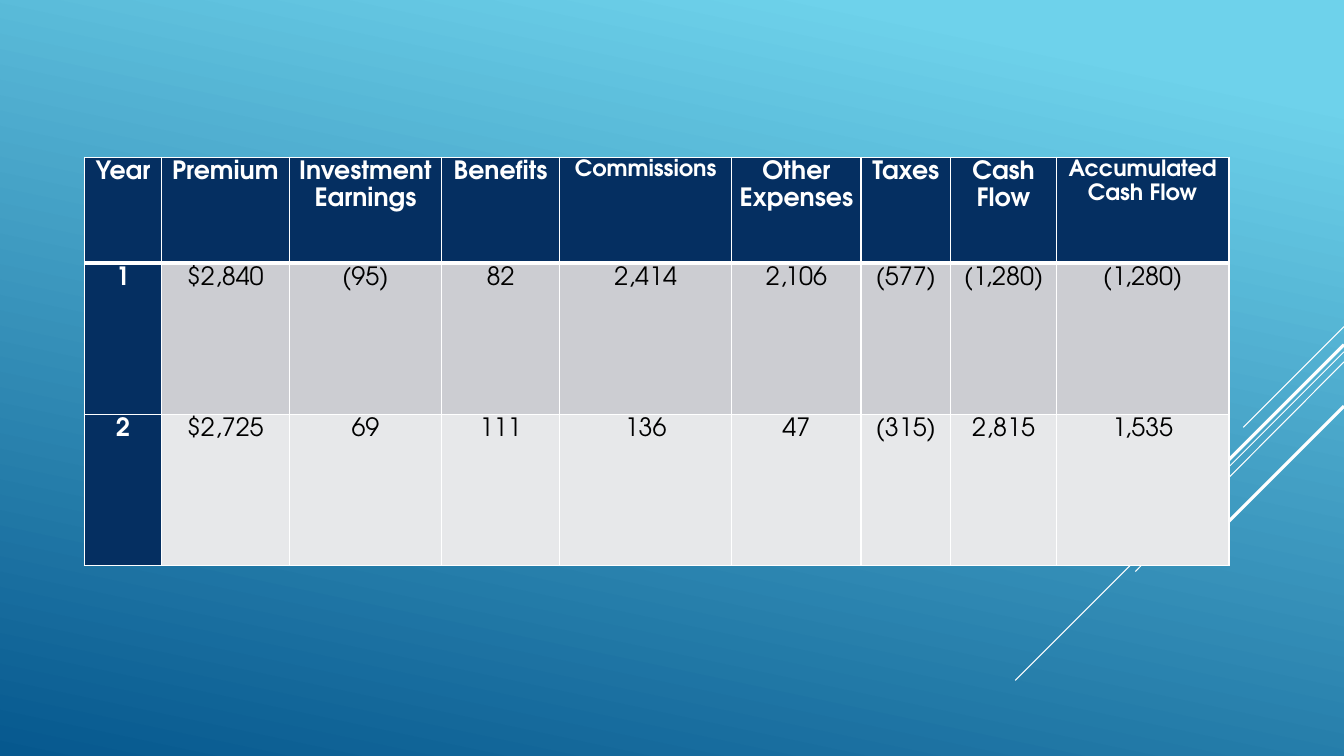
from lxml.etree import SubElement
from pptx import Presentation
from pptx.dml.color import RGBColor
from pptx.enum.shapes import MSO_CONNECTOR
from pptx.enum.text import PP_ALIGN
from pptx.oxml.ns import qn
from pptx.util import Inches, Pt

COLORS = {
    "sky": "6ED2EB",
    "ocean": "06588E",
    "navy": "052F61",
    "gray": "CCCDD2",
    "light gray": "E7E8EA",
    "white": "FFFFFF",
    "black": "000000",
}
FONT = "TeX Gyre Adventor"
HEADER_BORDER = 3
BORDER = 1

# Right end is the slide edge: top y, left x, bottom y, width in points
DIAGONALS = [
    (3.24, 12.33, 4.24, 0.75),
    (3.49, 10.07, 6.75, 0.75),
    (3.59, 11.26, 5.67, 0.75),
    (3.42, 11.42, 5.33, 2.25),
    (4.03, 11.94, 5.42, 2.25),
]
COLUMN_WIDTHS = [0.76, 1.27, 1.51, 1.17, 1.71, 1.28, 0.89, 1.05, 1.71]
ROW_HEIGHTS = [1.05, 1.5, 1.5]
ROW_FILLS = ["navy", "gray", "light gray"]
CASH_FLOWS = [
    ["Year", "Premium", "Investment Earnings", "Benefits", "Commissions",
     "Other Expenses", "Taxes", "Cash Flow", "Accumulated Cash Flow"],
    ["1", "$2,840", "(95)", "82", "2,414", "2,106", "(577)", "(1,280)", "(1,280)"],
    ["2", "$2,725", "69", "111", "136", "47", "(315)", "2,815", "1,535"],
]
SMALL_HEADINGS = {"Commissions", "Accumulated Cash Flow"}


def rgb(name):
    return RGBColor.from_string(COLORS[name])


class SlideBuilder:
    def __init__(self, presentation):
        self.slide = presentation.slides.add_slide(presentation.slide_layouts[6])
        self.width = presentation.slide_width

    def gradient_background(self, start, end, angle):
        """Fill the background; the angle runs counter-clockwise."""
        fill = self.slide.background.fill
        fill.gradient()
        fill.gradient_angle = angle
        for stop, (name, position) in zip(fill.gradient_stops, (start, end)):
            stop.color.rgb = rgb(name)
            stop.position = position

    def diagonal(self, top, left, bottom, width):
        line = self.slide.shapes.add_connector(
            MSO_CONNECTOR.STRAIGHT, self.width, Inches(top), Inches(left), Inches(bottom))
        line.line.color.rgb = rgb("white")
        line.line.width = Pt(width)
        SubElement(line._element.spPr, qn("a:effectLst"))

    def table(self, left, top, rows):
        frame = self.slide.shapes.add_table(
            len(rows), len(COLUMN_WIDTHS), Inches(left), Inches(top),
            Inches(sum(COLUMN_WIDTHS)), Inches(sum(ROW_HEIGHTS)))
        table = frame.table
        table.first_row = table.horz_banding = False
        for column, width in zip(table.columns, COLUMN_WIDTHS):
            column.width = Inches(width)
        for row, height in zip(table.rows, ROW_HEIGHTS):
            row.height = Inches(height)
        for row_index, texts in enumerate(rows):
            for column_index, text in enumerate(texts):
                self.cell(table.cell(row_index, column_index), text, row_index, column_index)

    def cell(self, cell, text, row_index, column_index):
        heading = row_index == 0 or column_index == 0
        cell.margin_left = cell.margin_right = Inches(0.07)
        cell.margin_top = cell.margin_bottom = 0
        self.borders(cell, {
            "a:lnL": BORDER,
            "a:lnR": BORDER,
            "a:lnT": HEADER_BORDER if row_index == 1 else BORDER,
            "a:lnB": HEADER_BORDER if row_index == 0 else BORDER,
        })
        cell.fill.solid()
        cell.fill.fore_color.rgb = rgb("navy" if heading else ROW_FILLS[row_index])
        paragraph = cell.text_frame.paragraphs[0]
        paragraph.alignment = PP_ALIGN.CENTER
        paragraph.line_spacing = 1.15
        run = paragraph.add_run()
        run.text = text
        run.font.name = FONT
        run.font.size = Pt(16 if text in SMALL_HEADINGS else 18)
        run.font.bold = heading
        run.font.color.rgb = rgb("white" if heading else "black")

    def borders(self, cell, widths):
        properties = cell._tc.get_or_add_tcPr()
        for side, width in widths.items():
            border = SubElement(properties, qn(side), w=str(Pt(width)))
            fill = SubElement(border, qn("a:solidFill"))
            SubElement(fill, qn("a:srgbClr"), val=COLORS["white"])


def main():
    presentation = Presentation()
    presentation.slide_width = Inches(13.33)
    presentation.slide_height = Inches(7.5)
    builder = SlideBuilder(presentation)
    builder.gradient_background(("sky", 0.1), ("ocean", 1), 258)
    for diagonal in DIAGONALS:
        builder.diagonal(*diagonal)
    builder.table(0.84, 1.56, CASH_FLOWS)
    presentation.save("out.pptx")


if __name__ == "__main__":
    main()
